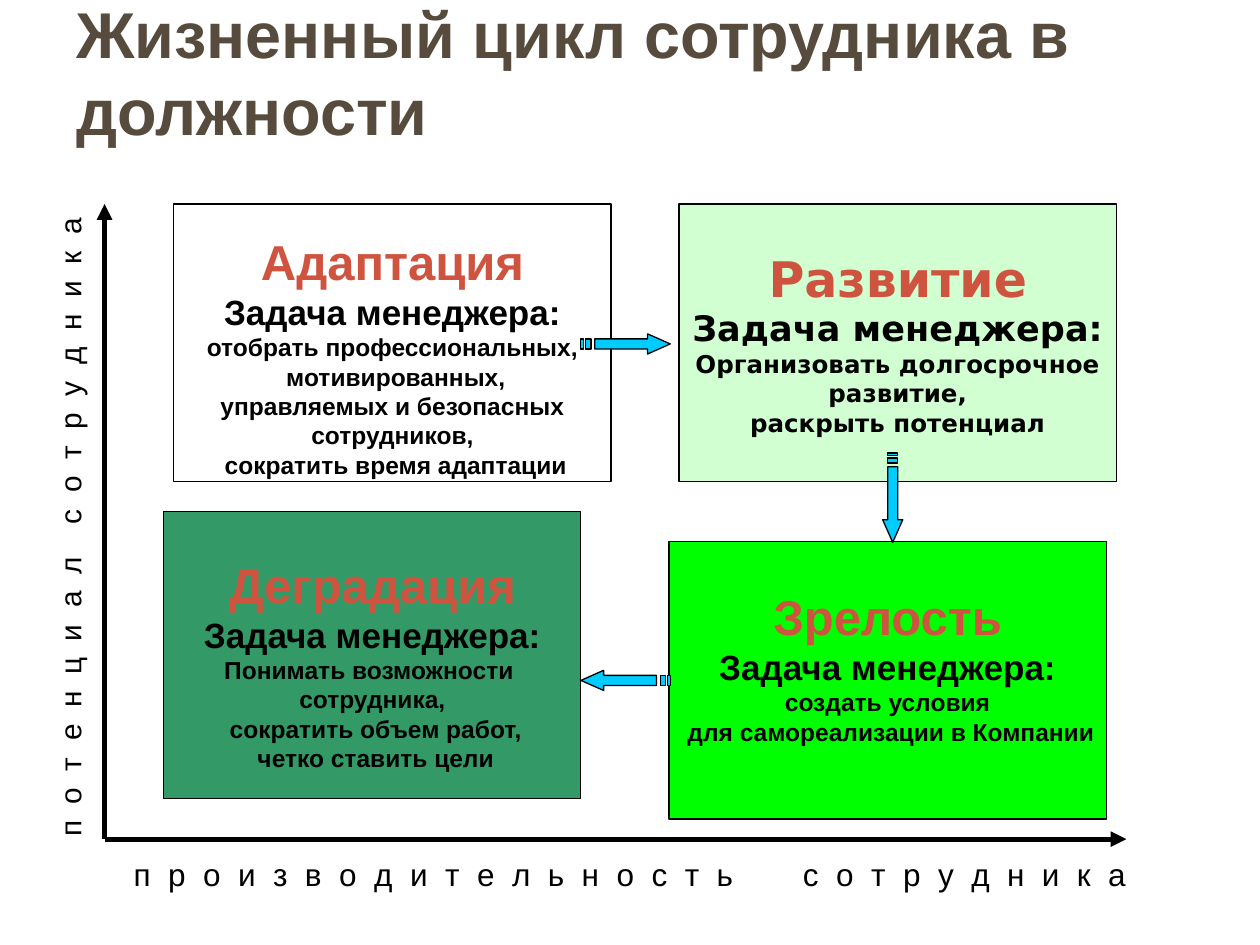
from lxml import etree
from pptx import Presentation
from pptx.dml.color import RGBColor
from pptx.enum import shapes, text
from pptx.oxml.ns import qn
from pptx.util import Inches, Pt

BLACK, RED, BLUE = "000000", "CF543F", "00CCFF"
STAGES = [
    # name, left, top, width, height, fill, font, extra top and bottom inset, task
    ("Адаптация", 1.38, 1.62, 3.47, 2.2, "FFFFFF", "Arial", 0.2, 0,
     ["отобрать профессиональных,", " мотивированных,",
      " управляемых и безопасных ", "сотрудников,",
      " сократить время адаптации"]),
    ("Зрелость", 5.31, 4.3, 3.47, 2.2, "00FF00", "Arial", 0, 0.22,
     ["создать условия", " для самореализации в Компании"]),
    ("Развитие", 5.39, 1.62, 3.47, 2.2, "CCFFCC", "DejaVu Sans", 0, 0,
     ["Организовать долгосрочное", "развитие,", "раскрыть потенциал"]),
    ("Деградация", 1.3, 4.06, 3.31, 2.28, "339966", "Arial", 0.13, 0,
     ["Понимать возможности ", "сотрудника,",
      " сократить объем работ,", " четко ставить цели"]),
]
ARROWS = [(4.61, 2.65, 0), (4.61, 5.32, 180), (6.73, 3.87, 90)]
# Whole hundredths of an inch, since the freeform builder rounds its points
ARROW_OUTLINES = [
    [(53, 0), (53, 4), (11, 4), (11, 12), (53, 12), (53, 16), (71, 8)],
    [(4, 4), (4, 12), (8, 12), (8, 4)],
    [(0, 4), (0, 12), (2, 12), (2, 4)],
]


def color(value):
    return RGBColor.from_string(value)


def paint(shape, fill):
    shape.shadow.inherit = False
    shape.fill.solid()
    shape.fill.fore_color.rgb = color(fill)
    shape.line.color.rgb = color(BLACK)
    shape.line.width = Pt(0.75)


def add_span(para, words, size, tint=BLACK, font="Arial", bold=False):
    span = para.add_run()
    span.text = words
    span.font.size = Pt(size)
    span.font.name = font
    span.font.bold = bold
    span.font.color.rgb = color(tint)


def add_text(page, words, left, top, width, height, size, tint=BLACK,
             bold=False, indent=0.1):
    box = page.shapes.add_textbox(Inches(left), Inches(top), Inches(width), Inches(height))
    frame = box.text_frame
    frame.word_wrap = True
    frame.margin_left = Inches(indent)
    add_span(frame.paragraphs[0], words, size, tint, bold=bold)
    return box


def spread(words, gap):
    """Set letters two spaces apart, with a wider gap between words."""
    return (" " * gap).join("  ".join(word) for word in words.split())


def add_axis(page, end_x, end_y):
    axis = page.shapes.add_connector(
        shapes.MSO_CONNECTOR.STRAIGHT,
        Inches(0.83), Inches(6.66), Inches(end_x), Inches(end_y))
    axis.line.color.rgb = color(BLACK)
    axis.line.width = Pt(3)
    etree.SubElement(axis.line._get_or_add_ln(), qn("a:tailEnd"), type="triangle")
    etree.SubElement(axis._element.spPr, qn("a:effectLst"))


def add_stage(page, name, left, top, width, height, fill, font, above, below, task):
    box = page.shapes.add_shape(
        shapes.MSO_SHAPE.RECTANGLE,
        Inches(left), Inches(top), Inches(width), Inches(height))
    paint(box, fill)
    frame = box.text_frame
    frame.word_wrap = False
    frame.vertical_anchor = text.MSO_ANCHOR.MIDDLE
    frame.margin_top = Inches(0.05 + above)
    frame.margin_bottom = Inches(0.05 + below)
    lines = [(name, 28, RED), ("Задача менеджера:", 20, BLACK)]
    lines += [(line, 14, BLACK) for line in task]
    for index, (words, size, tint) in enumerate(lines):
        para = frame.add_paragraph() if index else frame.paragraphs[0]
        para.alignment = text.PP_ALIGN.CENTER
        add_span(para, words, size, tint, font, bold=True)
    return box


def set_opacity(shape, percent):
    tint = shape._element.spPr.find(qn("a:solidFill"))[0]
    etree.SubElement(tint, qn("a:alpha"), val=str(percent * 1000))


def add_striped_arrow(page, left, top, rotation):
    head, *stripes = ARROW_OUTLINES
    builder = page.shapes.build_freeform(*head[0], scale=Inches(0.01))
    builder.add_line_segments(head[1:], close=True)
    for stripe in stripes:
        builder.move_to(*stripe[0])
        builder.add_line_segments(stripe[1:], close=True)
    arrow = builder.convert_to_shape(Inches(left), Inches(top))
    paint(arrow, BLUE)
    arrow.rotation = rotation


def main():
    deck = Presentation()
    deck.slide_width, deck.slide_height = Inches(10), Inches(7.5)
    page = deck.slides.add_slide(deck.slide_layouts[6])

    title = add_text(page, "Жизненный цикл сотрудника в должности",
                     0.51, 0.21, 9.14, 0.71, 37, "564B3C", bold=True)
    title.text_frame.vertical_anchor = text.MSO_ANCHOR.MIDDLE

    add_axis(page, 0.83, 1.62)
    add_axis(page, 8.94, 6.66)
    potential = add_text(page, spread("потенциал сотрудника", 4),
                         -2.05, 3.95, 5.2, 0.38, 17)
    potential.rotation = 270
    add_text(page, spread("производительность сотрудника", 8),
             0.83, 6.74, 8.51, 0.4, 18, indent=0.23)

    for stage in STAGES:
        box = add_stage(page, *stage)
        if stage[0] == "Развитие":
            set_opacity(box, 90)
    for arrow in ARROWS:
        add_striped_arrow(page, *arrow)
    deck.save("out.pptx")


if __name__ == "__main__":
    main()
